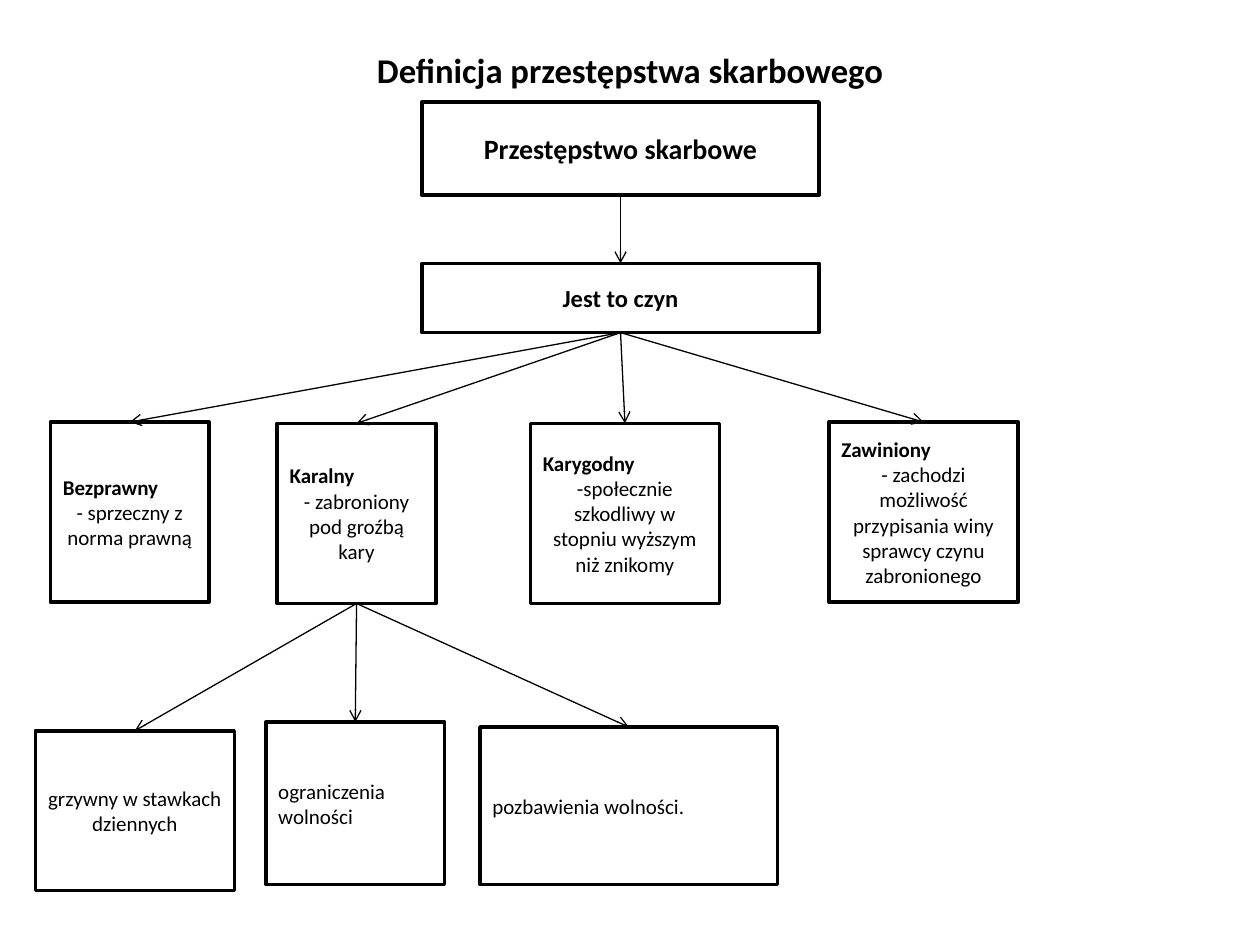
from lxml import etree
from pptx import Presentation
from pptx import util as u
from pptx.dml.color import RGBColor
from pptx.enum import shapes, text
from pptx.oxml.ns import qn

THEME = {
    "font": "Calibri", "ink": RGBColor(0, 0, 0), "paper": RGBColor(255, 255, 255),
    "title": 19.8, "root": 16, "act": 14, "body": 12, "border": 2, "arrow": 0.75,
}
LEFT, CENTER = text.PP_ALIGN.LEFT, text.PP_ALIGN.CENTER
TITLE = "Definicja przestępstwa skarbowego"
BOXES = {
    "root": ((3.35, 0.81, 3.15, 0.74), "root", [("Przestępstwo skarbowe", True, CENTER)]),
    "act": ((3.35, 2.09, 3.15, 0.55), "act", [("Jest to czyn", True, CENTER)]),
    "unlawful": ((0.4, 3.35, 1.26, 1.43), "body", [
        ("Bezprawny", True, LEFT), ("- sprzeczny z norma prawną", False, CENTER)]),
    "punishable": ((2.2, 3.36, 1.26, 1.43), "body", [
        ("Karalny", True, LEFT), ("- zabroniony pod groźbą kary", False, CENTER)]),
    "harmful": ((4.21, 3.36, 1.5, 1.43), "body", [
        ("Karygodny", True, LEFT),
        ("-społecznie szkodliwy w stopniu wyższym niż znikomy", False, CENTER)]),
    "culpable": ((6.58, 3.35, 1.5, 1.43), "body", [
        ("Zawiniony", True, LEFT),
        ("- zachodzi możliwość przypisania winy sprawcy czynu zabronionego", False, CENTER)]),
    "fine": ((0.28, 5.8, 1.58, 1.27), "body", [("grzywny w stawkach dziennych", False, CENTER)]),
    "restriction": ((2.11, 5.73, 1.42, 1.29), "body", [("ograniczenia wolności", False, LEFT)]),
    "prison": ((3.81, 5.77, 2.36, 1.25), "body", [("pozbawienia wolności.", False, LEFT)]),
}
BRANCHES = {
    "root": ["act"],
    "act": ["unlawful", "punishable", "harmful", "culpable"],
    "punishable": ["fine", "restriction", "prison"],
}


def write(tf, lines, size):
    tf.word_wrap = True
    tf.vertical_anchor = text.MSO_ANCHOR.MIDDLE
    for i, (line, bold, align) in enumerate(lines):
        p = tf.paragraphs[0] if i == 0 else tf.add_paragraph()
        p.alignment = align
        r = p.add_run()
        r.text = line
        r.font.name, r.font.size, r.font.bold = THEME["font"], u.Pt(THEME[size]), bold
        r.font.color.rgb = THEME["ink"]


def add_box(s, place, size, lines):
    sp = s.shapes.add_shape(shapes.MSO_SHAPE.RECTANGLE, *map(u.Inches, place))
    sp.shadow.inherit = False
    sp.fill.solid()
    sp.fill.fore_color.rgb = THEME["paper"]
    sp.line.color.rgb = THEME["ink"]
    sp.line.width = u.Pt(THEME["border"])
    write(sp.text_frame, lines, size)
    return sp


def add_arrow(s, parent, child):
    c = s.shapes.add_connector(shapes.MSO_CONNECTOR.STRAIGHT, 0, 0, 0, 0)
    c.begin_connect(parent, 2)
    c.end_connect(child, 0)
    c.line.color.rgb = THEME["ink"]
    c.line.width = u.Pt(THEME["arrow"])
    etree.SubElement(c.line._get_or_add_ln(), qn("a:tailEnd"), type="arrow")
    etree.SubElement(c._element.spPr, qn("a:effectLst"))


def main():
    prs = Presentation()
    prs.slide_width, prs.slide_height = u.Inches(10), u.Inches(7.5)
    s = prs.slides.add_slide(prs.slide_layouts[5])
    title = s.shapes.title
    title.left, title.top, title.width, title.height = map(u.Inches, (0.5, 0.3, 9, 0.51))
    write(title.text_frame, [(TITLE, True, CENTER)], "title")
    boxes = {name: add_box(s, *box) for name, box in BOXES.items()}
    for parent, children in BRANCHES.items():
        for child in children:
            add_arrow(s, boxes[parent], boxes[child])
    prs.save("out.pptx")


if __name__ == "__main__":
    main()
